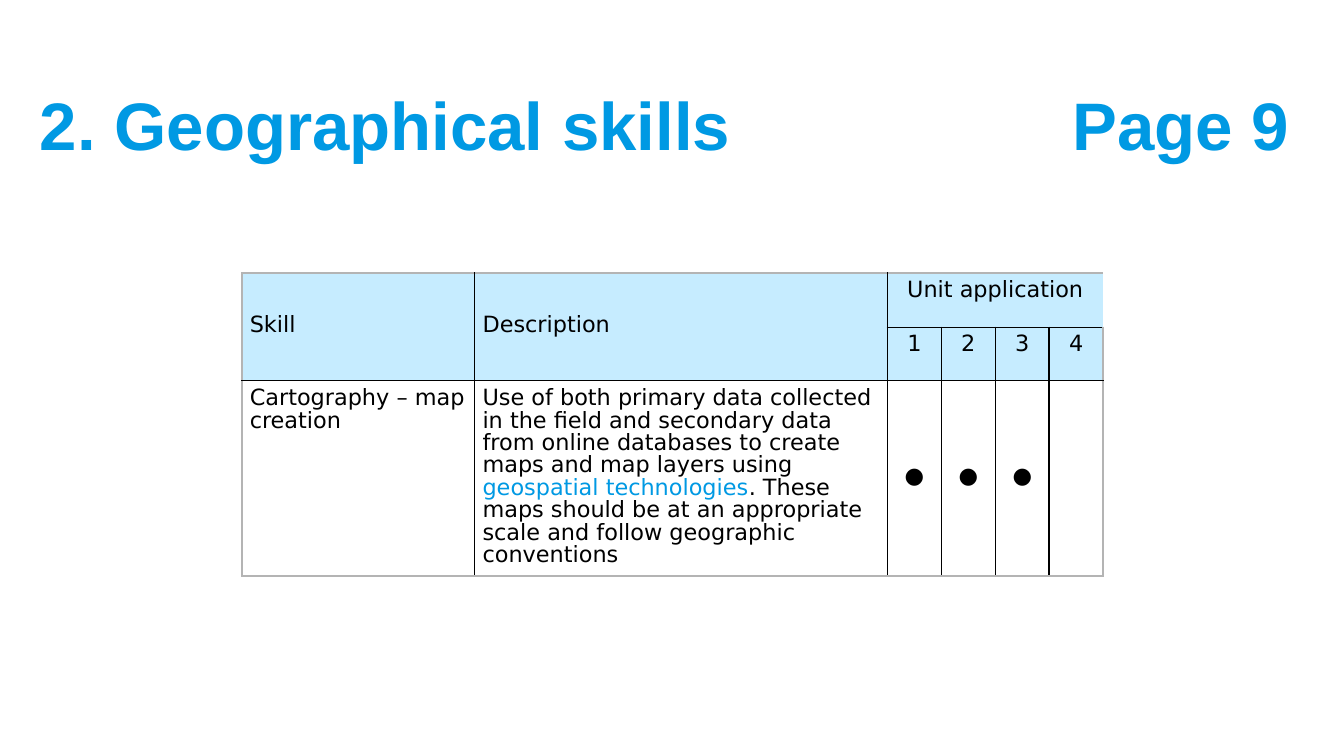
from dataclasses import dataclass
from itertools import product

from lxml.etree import SubElement
from pptx import Presentation
from pptx.dml.color import RGBColor as Rgb
from pptx.enum.text import MSO_ANCHOR as Anchor, PP_ALIGN as Align
from pptx.oxml.ns import qn
from pptx.util import Cm, Pt


@dataclass(frozen=True)
class Theme:
    accent: str = "0099E3"
    ink: str = "000000"
    header_fill: str = "C6ECFF"
    frame: str = "B4B4B4"
    heading_font: str = "Arial"
    table_font: str = "DejaVu Sans"
    heading_size: int = 36
    table_size: int = 12
    mark_leading: int = 11
    thin: float = 0.5
    thick: float = 1


THEME = Theme()
COLUMN_WIDTHS = [4.4, 7.8] + [1.02] * 4
ROW_HEIGHTS = [1.02, 1.02, 2.9]
HEADER_ROWS = 2
# Merged areas: first row, first column, last row, last column
MERGES = [(0, 0, 1, 0), (0, 1, 1, 1), (0, 2, 0, 5)]

DESCRIPTION = [
    ("Use of both primary data collected in the field and secondary data from "
     "online databases to create maps and map layers using ", THEME.ink),
    ("geospatial technologies", THEME.accent),
    (". These maps should be at an appropriate scale and follow geographic "
     "conventions", THEME.ink),
]


def add_run(paragraph, text, font, size, color, bold=False):
    run = paragraph.add_run()
    run.text = text
    run.font.name = font
    run.font.size = Pt(size)
    run.font.bold = bold
    run.font.color.rgb = Rgb.from_string(color)


def write_heading(shape, text, left, top, width, height, anchor):
    shape.left, shape.top = Cm(left), Cm(top)
    shape.width, shape.height = Cm(width), Cm(height)
    frame = shape.text_frame
    frame.word_wrap = True
    frame.vertical_anchor = anchor
    heading = frame.paragraphs[0]
    heading.alignment = Align.LEFT
    add_run(heading, text, THEME.heading_font, THEME.heading_size,
            THEME.accent, bold=True)


def write_cell(cell, runs, align=Align.LEFT, anchor=Anchor.TOP,
               leading=THEME.table_size):
    cell.vertical_anchor = anchor
    paragraph = cell.text_frame.paragraphs[0]
    paragraph.alignment = align
    paragraph.line_spacing = Pt(leading)
    for text, color in runs:
        add_run(paragraph, text, THEME.table_font, THEME.table_size, color)


def set_border(cell, position, side, width, color):
    properties = cell._tc.get_or_add_tcPr()
    line = SubElement(properties, qn(f"a:ln{side}"), w=str(int(Pt(width))))
    properties.insert(position, line)
    if color is None:
        SubElement(line, qn("a:noFill"))
    else:
        fill = SubElement(line, qn("a:solidFill"))
        SubElement(fill, qn("a:srgbClr"), val=color)


def line_style(index, last, thick_from):
    """Grey frame outside, black lines inside."""
    if index in (0, last):
        return THEME.thick, THEME.frame
    return (THEME.thick if index >= thick_from else THEME.thin), THEME.ink


def draw_borders(cell, row, column):
    areas = [a for a in MERGES
             if a[0] <= row <= a[2] and a[1] <= column <= a[3]]
    top, left, bottom, right = (areas or [(row, column, row, column)])[0]
    columns, rows = len(COLUMN_WIDTHS), len(ROW_HEIGHTS)
    edges = [
        ("L", column == left, line_style(column, columns, 2)),
        ("R", column == right, line_style(column + 1, columns, 2)),
        ("T", row == top, line_style(row, rows, rows)),
        ("B", row == bottom, line_style(row + 1, rows, rows)),
    ]
    for position, (side, visible, (width, color)) in enumerate(edges):
        set_border(cell, position, side, width, color if visible else None)


def add_skills_table(slide):
    table = slide.shapes.add_table(
        len(ROW_HEIGHTS), len(COLUMN_WIDTHS),
        Cm(4.57), Cm(5.16), Cm(sum(COLUMN_WIDTHS)), Cm(sum(ROW_HEIGHTS))).table
    table.first_row = table.horz_banding = False
    for column, width in zip(table.columns, COLUMN_WIDTHS):
        column.width = Cm(width)
    for row, height in zip(table.rows, ROW_HEIGHTS):
        row.height = Cm(height)

    # Fills, margins and borders
    for row, column in product(range(len(ROW_HEIGHTS)),
                               range(len(COLUMN_WIDTHS))):
        cell = table.cell(row, column)
        cell.margin_left = cell.margin_right = Cm(0.15)
        cell.margin_top = cell.margin_bottom = Cm(0.15)
        if row < HEADER_ROWS:
            cell.fill.solid()
            cell.fill.fore_color.rgb = Rgb.from_string(THEME.header_fill)
        else:
            cell.fill.background()
        draw_borders(cell, row, column)
    for top, left, bottom, right in MERGES:
        table.cell(top, left).merge(table.cell(bottom, right))

    # Header
    for column, label in enumerate(["Skill", "Description"]):
        write_cell(table.cell(0, column), [(label, THEME.ink)],
                   anchor=Anchor.MIDDLE)
    write_cell(table.cell(0, 2), [("Unit application", THEME.ink)],
               Align.CENTER)
    for unit in range(1, 5):
        write_cell(table.cell(1, unit + 1), [(str(unit), THEME.ink)],
                   Align.CENTER)

    # Skill, its description and the units that apply it
    write_cell(table.cell(2, 0), [("Cartography – map creation", THEME.ink)])
    write_cell(table.cell(2, 1), DESCRIPTION)
    for unit in (1, 2, 3):
        write_cell(table.cell(2, unit + 1), [("●", THEME.ink)], Align.CENTER,
                   Anchor.MIDDLE, THEME.mark_leading)


def main():
    deck = Presentation()
    deck.slide_width, deck.slide_height = Cm(25.4), Cm(14.29)
    slide = deck.slides.add_slide(deck.slide_layouts[5])

    # Title, skills table and page reference
    write_heading(slide.shapes.title, "2. Geographical skills",
                  0.5, 1.14, 24.2, 2.39, Anchor.MIDDLE)
    add_skills_table(slide)
    page_reference = slide.shapes.add_textbox(0, 0, 0, 0)
    write_heading(page_reference, "Page 9", 20.02, 1.45, 4.88, 1.8, Anchor.TOP)

    deck.save("out.pptx")


if __name__ == "__main__":
    main()
